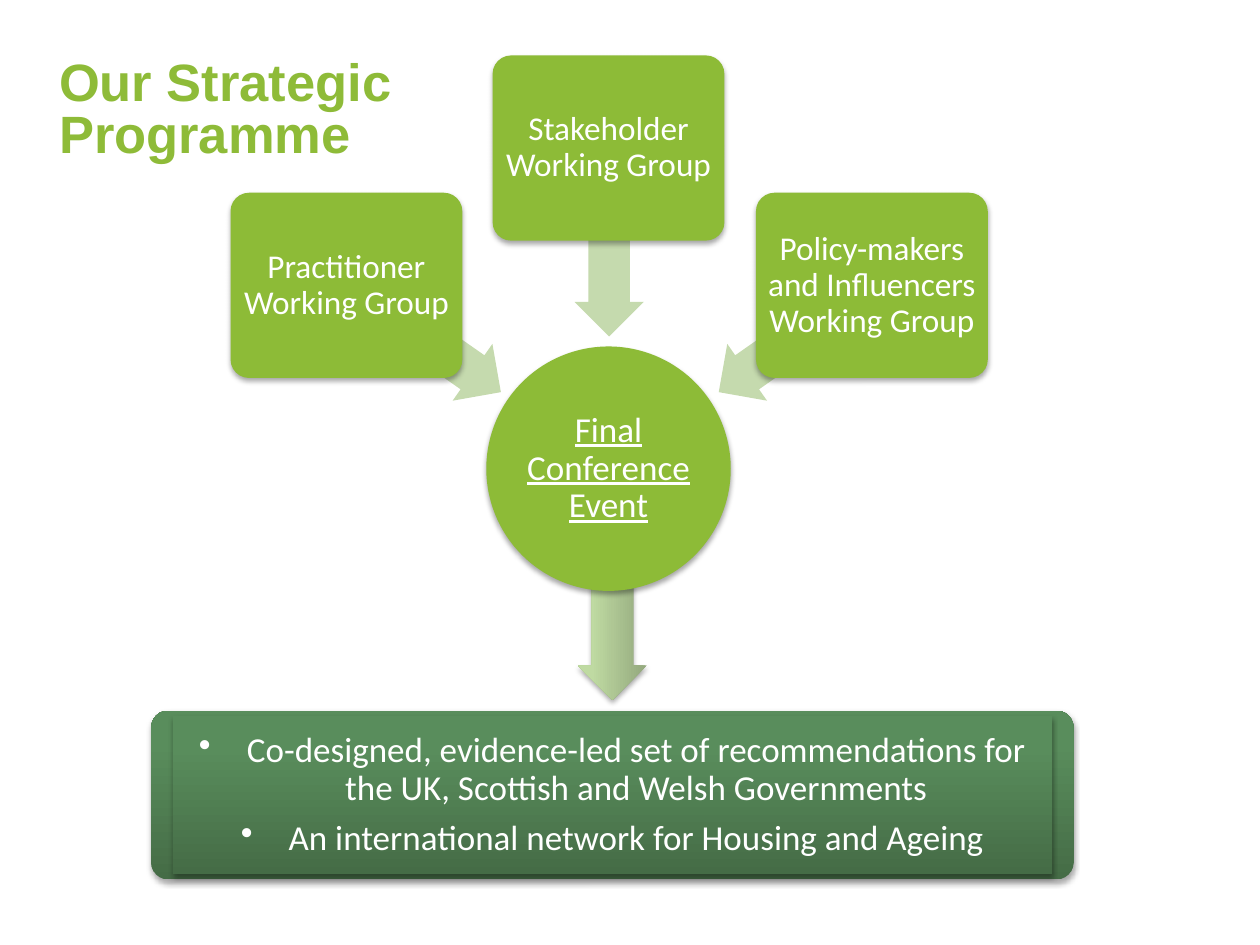
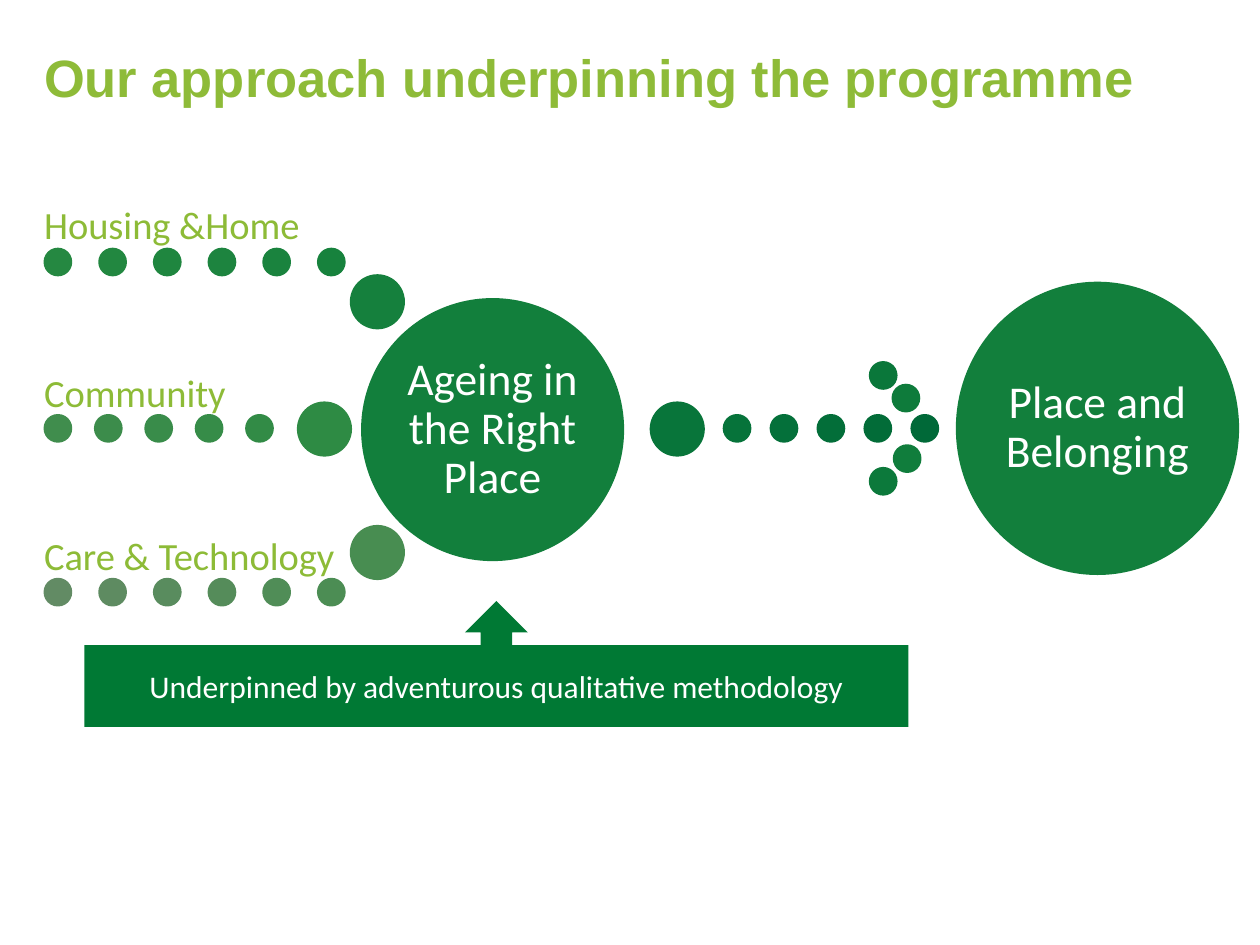
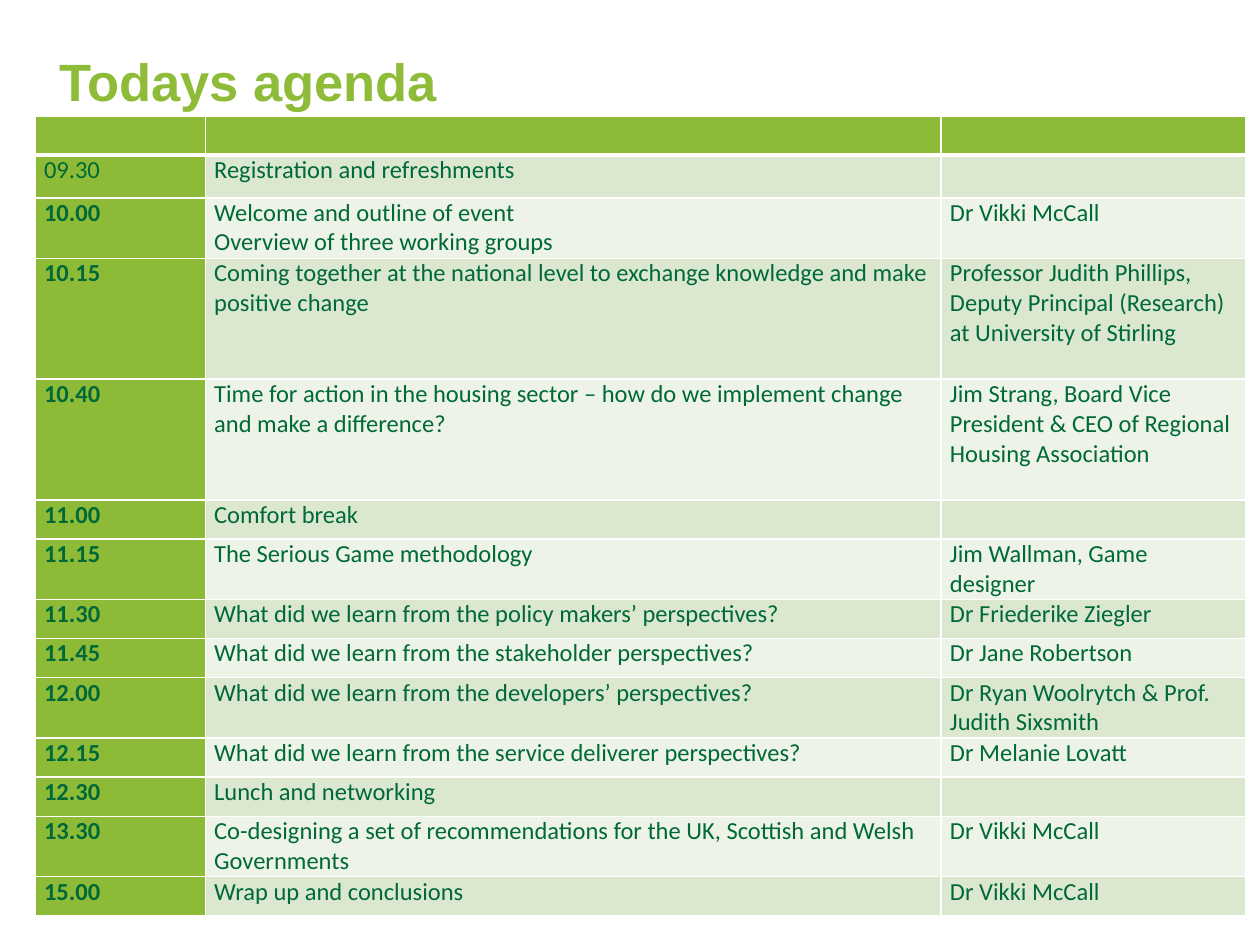
from lxml import etree
from pptx import Presentation
from pptx.dml.color import RGBColor
from pptx.enum.shapes import MSO_SHAPE
from pptx.enum.text import MSO_ANCHOR, PP_ALIGN
from pptx.oxml import parse_xml
from pptx.oxml.ns import nsdecls, qn
from pptx.util import Inches, Pt

OVAL, RECT, ROUNDED = MSO_SHAPE.OVAL, MSO_SHAPE.RECTANGLE, MSO_SHAPE.ROUNDED_RECTANGLE
LEFT_ARROW, UP_CALLOUT = MSO_SHAPE.LEFT_ARROW, MSO_SHAPE.UP_ARROW_CALLOUT
TOP, MIDDLE, BOTTOM = MSO_ANCHOR.TOP, MSO_ANCHOR.MIDDLE, MSO_ANCHOR.BOTTOM
LEFT, CENTER = PP_ALIGN.LEFT, PP_ALIGN.CENTER

WHITE = RGBColor(0xFF, 0xFF, 0xFF)
TITLE_GREEN = RGBColor(0x8E, 0xBB, 0x38)
LIME = RGBColor(0x8D, 0xBB, 0x37)
PALE_LIME = RGBColor(0xC5, 0xDA, 0xAE)
FOREST = RGBColor(0x00, 0x79, 0x34)
DEEP_GREEN = RGBColor(0x12, 0x7F, 0x3C)
TEXT_GREEN = RGBColor(0x00, 0x69, 0x38)
BAND = RGBColor(0xDB, 0xE7, 0xCE)
PALE_BAND = RGBColor(0xEE, 0xF3, 0xE8)
ARROW_GRADIENT = (RGBColor(0x93, 0xA8, 0x7D), RGBColor(0xBF, 0xDA, 0xA2))
PANEL_GRADIENT = (RGBColor(0x45, 0x6C, 0x46), RGBColor(0x59, 0x8D, 0x5C))

CENTRED = {"alignment": CENTER, "line_spacing": 0.9}
TITLE = {"anchor": TOP, "inset": (0, 0), "colour": TITLE_GREEN,
         "paragraph": {"alignment": LEFT, "line_spacing": Pt(30)},
         "font": {"name": "Arial", "size": Pt(30), "bold": True}}
GROUP = {"anchor": MIDDLE, "inset": (0.04, 0.04), "colour": WHITE, "paragraph": CENTRED,
         "font": {"name": "Calibri", "size": Pt(19)}}
EVENT = {**GROUP, "inset": (0.01, 0.01),
         "font": {"name": "Calibri", "size": Pt(20), "underline": True}}
OUTCOME = {**GROUP, "paragraph": {**CENTRED, "space_after": Pt(7)},
           "font": {"name": "Calibri", "size": Pt(20)}}
GOAL = {**GROUP, "font": {"name": "Calibri", "size": Pt(26)}}
METHOD = {**GROUP, "inset": (0.1, 0.05), "paragraph": {"alignment": CENTER},
          "font": {"name": "Calibri", "size": Pt(18)}}
THEME = {**GROUP, "anchor": BOTTOM, "inset": (0, 0), "colour": LIME,
         "paragraph": {"alignment": LEFT, "line_spacing": 0.9},
         "font": {"name": "Calibri", "size": Pt(22)}}
AGENDA = {"anchor": TOP, "inset": (0.07, 0), "colour": TEXT_GREEN,
          "paragraph": {"alignment": LEFT}, "font": {"name": "Calibri", "size": Pt(14)}}


def write(frame, text, style):
    frame.text = text
    frame.word_wrap = True
    frame.vertical_anchor = style["anchor"]
    across, down = style["inset"]
    frame.margin_left = frame.margin_right = Inches(across)
    frame.margin_top = frame.margin_bottom = Inches(down)
    for paragraph in frame.paragraphs:
        for key, value in style["paragraph"].items():
            setattr(paragraph, key, value)
        for run in paragraph.runs:
            for key, value in style["font"].items():
                setattr(run.font, key, value)
            run.font.color.rgb = style["colour"]


def draw(slide, kind, box, fill, line=None, shadow=False, adjust=()):
    shape = slide.shapes.add_shape(kind, *map(Inches, box))
    shape.shadow.inherit = False
    if isinstance(fill, RGBColor):
        shape.fill.solid()
        shape.fill.fore_color.rgb = fill
    else:
        shape.fill.gradient()
        shape.fill.gradient_angle = 90
        for stop, colour, position in zip(shape.fill.gradient_stops, fill, (0, 0.8)):
            stop.color.rgb = colour
            stop.position = position
    if line:
        shape.line.color.rgb = line
        shape.line.width = Pt(2)
    else:
        shape.line.fill.background()
    for index, value in enumerate(adjust):
        shape.adjustments[index] = value
    if shadow:
        effects = shape._element.spPr.find(qn("a:effectLst"))
        effects.append(parse_xml(
            f'<a:outerShdw {nsdecls("a")} blurRad="40000" dist="23000" dir="5400000" '
            'rotWithShape="0"><a:srgbClr val="000000"><a:alpha val="35000"/>'
            '</a:srgbClr></a:outerShdw>'))
    return shape


prs = Presentation()
prs.slide_width, prs.slide_height = Inches(10), Inches(7.5)
slides = []
for heading, left, top in (
    ("Our Strategic\vProgramme", 0.47, 0.47),
    ("Our approach underpinning the programme", 0.35, 0.44),
    ("Todays agenda", 0.47, 0.47),
):
    slide = prs.slides.add_slide(prs.slide_layouts[6])
    title = slide.shapes.add_textbox(Inches(left), Inches(top), Inches(9.06), Inches(1.46))
    write(title.text_frame, heading, TITLE)
    slides.append(slide)
programme, approach, agenda = slides

outcome_arrow = draw(programme, LEFT_ARROW, (4.39, 4.81, 0.94, 0.55), ARROW_GRADIENT,
                     shadow=True, adjust=(0.6, 0.5))
outcome_arrow.rotation = 270
event = draw(programme, OVAL, (3.86, 2.75, 1.94, 1.94), LIME, shadow=True)
write(event.text_frame, "Final Conference Event", EVENT)

for name, left, top, arrow_left, arrow_top, angle in (
    ("Practitioner Working Group", 1.83, 1.53, 2.62, 2.41, 215),
    ("Stakeholder Working Group", 3.91, 0.44, 4.09, 1.65, 270),
    ("Policy-makers and Influencers Working Group", 6, 1.53, 5.57, 2.41, 325),
):
    arrow = draw(programme, LEFT_ARROW, (arrow_left, arrow_top, 1.49, 0.55), PALE_LIME,
                 adjust=(0.6, 0.5))
    arrow.rotation = angle
    group = draw(programme, ROUNDED, (left, top, 1.84, 1.47), LIME, shadow=True, adjust=(0.1,))
    write(group.text_frame, name, GROUP)

draw(programme, ROUNDED, (1.2, 5.64, 7.32, 1.34), PANEL_GRADIENT, shadow=True, adjust=(0.1,))
outcomes = draw(programme, RECT, (1.37, 5.68, 6.98, 1.26), PANEL_GRADIENT, shadow=True)
write(outcomes.text_frame,
      "Co-designed, evidence-led set of recommendations for the UK, Scottish and Welsh Governments\n"
      "An international network for Housing and Ageing", OUTCOME)
for paragraph in outcomes.text_frame.paragraphs:
    properties = paragraph._p.get_or_add_pPr()
    properties.set("marL", str(Inches(0.38)))
    properties.set("indent", str(-Inches(0.38)))
    etree.SubElement(properties, qn("a:buChar")).set("char", "•")

method = draw(approach, UP_CALLOUT, (0.67, 4.77, 6.54, 1), FOREST)
write(method.text_frame, "Underpinned by adventurous qualitative methodology", METHOD)

DOT, BIG_DOT = 0.2, 0.41
for first_left, last_left, top, count, first, last in (
    (0.36, 2.53, 1.98, 6, (0x25, 0x88, 0x41), (0x17, 0x82, 0x3D)),
    (0.36, 1.96, 3.3, 5, (0x40, 0x8D, 0x4D), (0x32, 0x8B, 0x46)),
    (0.36, 2.53, 4.6, 6, (0x62, 0x8B, 0x64), (0x4C, 0x8D, 0x54)),
    (5.75, 7.24, 3.3, 5, (0x06, 0x73, 0x3A), (0x00, 0x69, 0x38)),
):
    for index in range(count):
        share = index / (count - 1)
        shade = RGBColor(*(round(a + (b - a) * share) for a, b in zip(first, last)))
        left = first_left + (last_left - first_left) * share
        draw(approach, OVAL, (left, top, DOT, DOT), shade, line=shade)

for left, top, size, code in (
    (2.79, 2.19, BIG_DOT, "15803D"),
    (2.37, 3.2, BIG_DOT, "2E8B44"),
    (2.79, 4.18, BIG_DOT, "488D51"),
    (5.17, 3.2, BIG_DOT, "08753A"),
    (6.91, 2.88, DOT, "0A773A"),
    (6.91, 3.72, DOT, "0C793B"),
    (7.09, 3.06, DOT, "0E7B3B"),
    (7.1, 3.54, DOT, "107D3C"),
):
    shade = RGBColor.from_string(code)
    draw(approach, OVAL, (left, top, size, size), shade, line=shade)

for name, top, width in (
    ("Housing &Home", 1.45, 2.38),
    ("Community", 2.78, 1.8),
    ("Care & Technology", 4.07, 2.38),
):
    theme = approach.shapes.add_textbox(Inches(0.35), Inches(top), Inches(width), Inches(0.52))
    write(theme.text_frame, name, THEME)

for name, box in (
    ("Ageing in the Right Place", (2.88, 2.38, 2.06, 2.06)),
    ("Place and Belonging", (7.6, 2.25, 2.22, 2.3)),
):
    goal = draw(approach, OVAL, box, DEEP_GREEN, line=DEEP_GREEN)
    write(goal.text_frame, name, GOAL)

sessions = (
    (0.31, "", "", ""),
    (0.34, "09.30", "Registration and refreshments", ""),
    (0.48, "10.00", "Welcome and outline of event\nOverview of three working groups",
     "Dr Vikki McCall"),
    (0.96, "10.15", "Coming together at the national level to exchange knowledge and make "
     "positive change",
     "Professor Judith Phillips, Deputy Principal (Research) at University of Stirling"),
    (0.96, "10.40", "Time for action in the housing sector – how do we implement change "
     "and make a difference?",
     "Jim Strang, Board Vice President & CEO of Regional Housing Association"),
    (0.31, "11.00", "Comfort break", ""),
    (0.48, "11.15", "The Serious Game methodology", "Jim Wallman, Game designer"),
    (0.31, "11.30", "What did we learn from the policy makers’ perspectives?",
     "Dr Friederike Ziegler"),
    (0.31, "11.45", "What did we learn from the stakeholder perspectives?", "Dr Jane Robertson"),
    (0.48, "12.00", "What did we learn from the developers’ perspectives?",
     "Dr Ryan Woolrytch & Prof. Judith Sixsmith"),
    (0.31, "12.15", "What did we learn from the service deliverer perspectives?",
     "Dr Melanie Lovatt"),
    (0.31, "12.30", "Lunch and networking", ""),
    (0.48, "13.30", "Co-designing a set of recommendations for the UK, Scottish and Welsh "
     "Governments", "Dr Vikki McCall"),
    (0.31, "15.00", "Wrap up and conclusions", "Dr Vikki McCall"),
)
timetable = agenda.shapes.add_table(len(sessions), 3, Inches(0.28), Inches(0.92),
                                    Inches(9.61), Inches(6.38)).table
timetable.first_row = timetable.horz_banding = False
for column, width in zip(timetable.columns, (1.35, 5.84, 2.42)):
    column.width = Inches(width)

for row, (height, *texts) in enumerate(sessions):
    timetable.rows[row].height = Inches(height)
    for column, text in enumerate(texts):
        cell = timetable.cell(row, column)
        bold = column == 0 and row > 1
        write(cell.text_frame, text, {**AGENDA, "font": {**AGENDA["font"], "bold": bold}})
        cell.vertical_anchor = TOP
        cell.margin_left = cell.margin_right = Inches(0.07)
        cell.margin_top = cell.margin_bottom = 0
        if not text:
            cell.text_frame.paragraphs[0]._p.get_or_add_endParaRPr().set("sz", "1400")
        for side in "LRTB":
            thick = (row, side) in ((0, "B"), (1, "T"))
            cell._tc.get_or_add_tcPr().append(parse_xml(
                f'<a:ln{side} {nsdecls("a")} w="{Pt(3 if thick else 1)}"><a:solidFill>'
                f'<a:srgbClr val="{WHITE}"/></a:solidFill></a:ln{side}>'))
        cell.fill.solid()
        band = BAND if row % 2 else PALE_BAND
        cell.fill.fore_color.rgb = LIME if row == 0 or column == 0 else band

prs.save("out.pptx")
